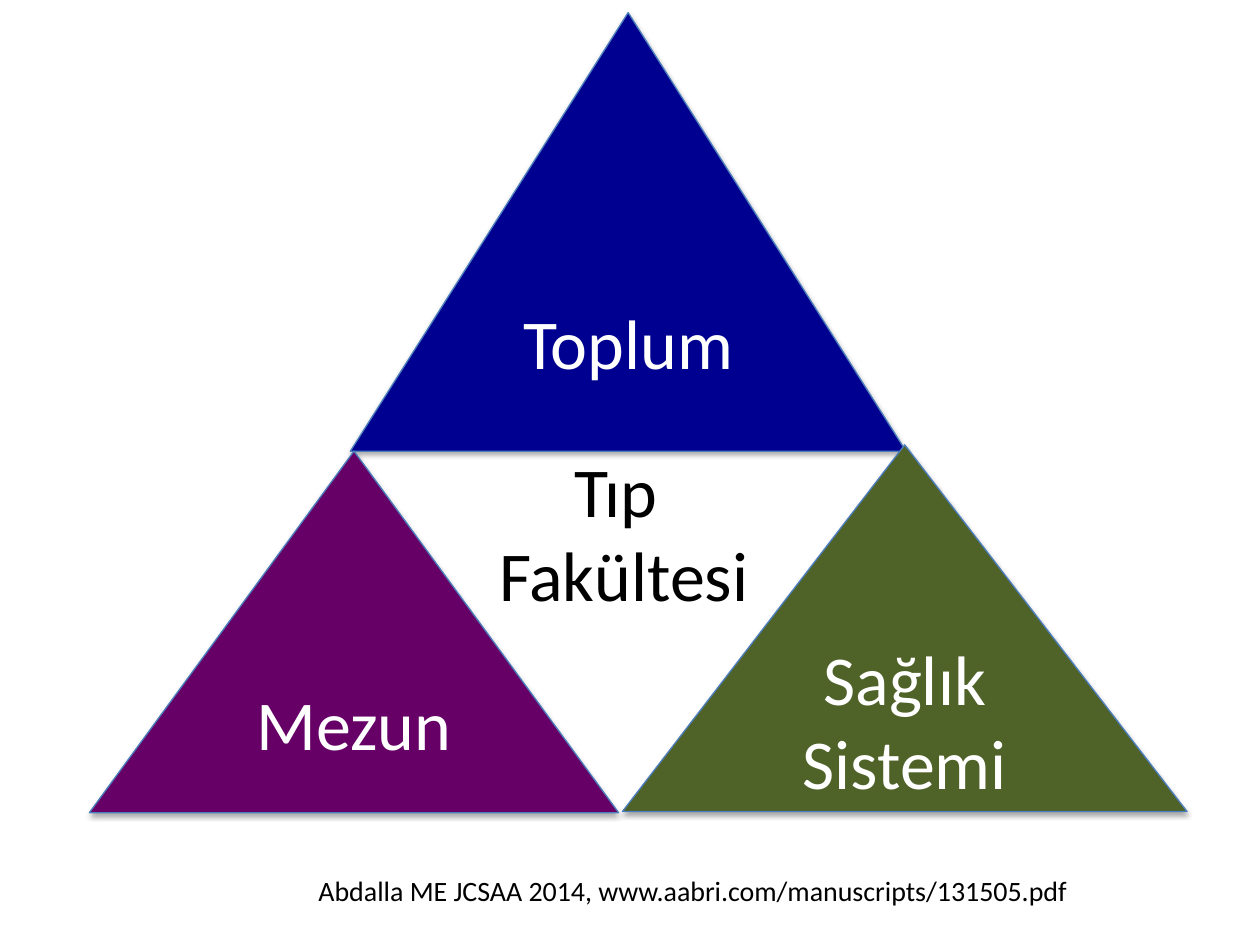
from dataclasses import dataclass

from lxml import etree
from pptx import Presentation
from pptx.dml.color import RGBColor
from pptx.enum.shapes import MSO_SHAPE
from pptx.enum.text import MSO_ANCHOR as Anchor, MSO_AUTO_SIZE as AutoSize, PP_ALIGN as Align
from pptx.oxml import parse_xml
from pptx.util import Pt


@dataclass(frozen=True)
class Theme:
    font: str = "Calibri"
    label_size: int = 40
    source_size: int = 16
    navy: str = "000090"
    purple: str = "660066"
    green: str = "4F6228"
    outline: str = "4B7EBC"
    white: str = "FFFFFF"
    black: str = "000000"


theme = Theme()
SHADOW = (
    '<a:effectLst xmlns:a="http://schemas.openxmlformats.org/drawingml/2006/main">'
    '<a:outerShdw blurRad="40000" dist="23000" dir="5400000" rotWithShape="0">'
    '<a:srgbClr val="000000"><a:alpha val="35000"/></a:srgbClr>'
    '</a:outerShdw></a:effectLst>'
)


def write(shape, text, size, color, anchor):
    frame = shape.text_frame
    frame.word_wrap = True
    frame.vertical_anchor = anchor
    frame.text = text
    for paragraph in frame.paragraphs:
        paragraph.alignment = Align.CENTER
        for run in paragraph.runs:
            run.font.name = theme.font
            run.font.size = Pt(size)
            run.font.color.rgb = RGBColor.from_string(color)


presentation = Presentation()
presentation.slide_width, presentation.slide_height = Pt(720), Pt(540)
slide = presentation.slides.add_slide(presentation.slide_layouts[5])

# Three outer triangles: text, fill, left, top, width, height
triangles = [
    ("Toplum", theme.navy, 200.2, 7.2, 317.5, 250.6),
    ("Mezun", theme.purple, 51.1, 257.8, 302.4, 206.6),
    ("Sağlık Sistemi", theme.green, 355.7, 254.2, 322.6, 209.5),
]
for text, fill, *box in triangles:
    triangle = slide.shapes.add_shape(MSO_SHAPE.ISOSCELES_TRIANGLE, *map(Pt, box))
    triangle.fill.solid()
    triangle.fill.fore_color.rgb = RGBColor.from_string(fill)
    triangle.line.color.rgb = RGBColor.from_string(theme.outline)
    triangle.line.width = Pt(0.75)
    triangle._element.spPr.append(parse_xml(SHADOW))
    write(triangle, text, theme.label_size, theme.white, Anchor.MIDDLE)

# Label in the open centre
center = slide.shapes.add_textbox(Pt(260.6), Pt(252), Pt(182.9), Pt(104.4))
write(center, "Tıp\n Fakültesi", theme.label_size, theme.black, Anchor.TOP)
center.text_frame.auto_size = AutoSize.SHAPE_TO_FIT_TEXT

# Source line in the title placeholder
source = slide.shapes.title
source.left, source.top, source.width, source.height = Pt(72), Pt(463.7), Pt(648), Pt(90)
write(source, "Abdalla ME JCSAA 2014, www.aabri.com/manuscripts/131505.pdf",
      theme.source_size, theme.black, Anchor.MIDDLE)
source.text_frame.auto_size = AutoSize.NONE

presentation.save("out.pptx")
